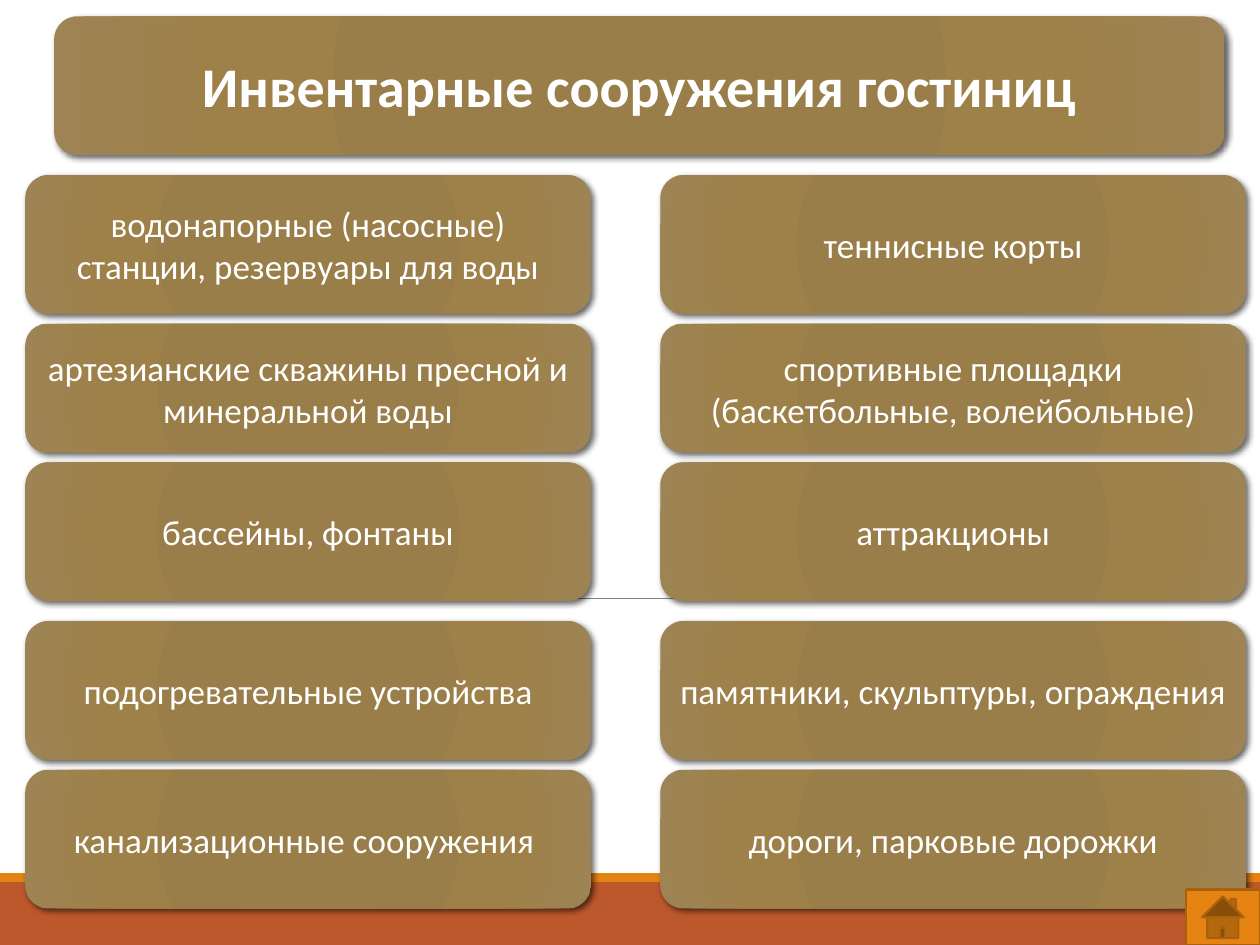
from dataclasses import dataclass

from lxml import etree
from pptx import Presentation
from pptx.dml.color import RGBColor
from pptx.enum.shapes import MSO_CONNECTOR, MSO_SHAPE
from pptx.enum.text import MSO_ANCHOR, PP_ALIGN
from pptx.oxml import parse_xml
from pptx.oxml.ns import nsdecls, qn
from pptx.shapes.autoshape import Shape
from pptx.slide import Slide
from pptx.util import Inches, Pt

RECTANGLE = MSO_SHAPE.RECTANGLE
ROUNDED = MSO_SHAPE.ROUNDED_RECTANGLE
HOME_BUTTON = MSO_SHAPE.ACTION_BUTTON_HOME
STRAIGHT = MSO_CONNECTOR.STRAIGHT
MIDDLE = MSO_ANCHOR.MIDDLE
CENTER = PP_ALIGN.CENTER


@dataclass(frozen=True)
class Theme:
    font: str = "Calibri"
    title_size: int = 32
    card_size: int = 20
    text: str = "FFFFFF"
    footer: str = "BD582C"
    accent: str = "E48312"
    button_line: str = "A9610D"
    divider: str = "808080"
    shadow: str = "000000"
    gradient: tuple = ((0, "9A7D48"), (34, "9A7E4A"), (70, "9E8049"), (100, "9E8454"))


@dataclass(frozen=True)
class Box:
    left: float
    top: float
    width: float
    height: float


@dataclass(frozen=True)
class Row:
    top: float
    height: float
    labels: tuple[str, str]


THEME = Theme()
TITLE_BOX = Box(0.43, 0.13, 9.29, 1.1)
COLUMNS = ((0.2, 4.49), (5.24, 4.65))
ROWS = (
    Row(1.39, 1.1, ("водонапорные (насосные) станции, резервуары для воды", "теннисные корты")),
    Row(2.57, 1.02, ("артезианские скважины пресной и минеральной воды",
                     "спортивные площадки (баскетбольные, волейбольные)")),
    Row(3.67, 1.1, ("бассейны, фонтаны", "аттракционы")),
    Row(4.93, 1.1, ("подогревательные устройства", "памятники, скульптуры, ограждения ")),
    Row(6.11, 1.1, ("канализационные сооружения ", "дороги, парковые дорожки")),
)


def add_box(slide: Slide, kind: int, box: Box) -> Shape:
    shape = slide.shapes.add_shape(
        kind, Inches(box.left), Inches(box.top), Inches(box.width), Inches(box.height))
    shape.shadow.inherit = False
    shape.line.fill.background()
    return shape


def add_solid(slide: Slide, kind: int, box: Box, color: str) -> Shape:
    shape = add_box(slide, kind, box)
    shape.fill.solid()
    shape.fill.fore_color.rgb = RGBColor.from_string(color)
    return shape


def apply_radial_gradient(shape: Shape) -> None:
    stops = "".join(
        f'<a:gs pos="{position * 1000}"><a:srgbClr val="{color}"/></a:gs>'
        for position, color in THEME.gradient)
    gradient = parse_xml(
        f'<a:gradFill {nsdecls("a")} rotWithShape="1"><a:gsLst>{stops}</a:gsLst>'
        '<a:path path="circle">'
        '<a:fillToRect l="100000" t="100000" r="100000" b="100000"/>'
        '</a:path></a:gradFill>')
    shape.fill.background()
    properties = shape.element.spPr
    properties.replace(properties.find(qn("a:noFill")), gradient)


def apply_shadow(shape: Shape) -> None:
    effects = shape.element.spPr.find(qn("a:effectLst"))
    effects.append(parse_xml(
        f'<a:outerShdw {nsdecls("a")} blurRad="{Pt(3.5)}" dist="{Pt(2)}" '
        f'dir="{45 * 60000}" algn="tl" rotWithShape="0">'
        f'<a:srgbClr val="{THEME.shadow}"><a:alpha val="60000"/></a:srgbClr>'
        '</a:outerShdw>'))


def add_card(slide: Slide, box: Box, text: str, size: int, bold: bool = False) -> None:
    shape = add_box(slide, ROUNDED, box)
    apply_radial_gradient(shape)
    apply_shadow(shape)
    frame = shape.text_frame
    frame.word_wrap = True
    frame.vertical_anchor = MIDDLE
    paragraph = frame.paragraphs[0]
    paragraph.alignment = CENTER
    run = paragraph.add_run()
    run.text = text
    text_format = {"name": THEME.font, "size": Pt(size), "bold": bold}
    for attribute, value in text_format.items():
        setattr(run.font, attribute, value)
    run.font.color.rgb = RGBColor.from_string(THEME.text)


def add_divider(slide: Slide, left: float, right: float, top: float) -> None:
    connector = slide.shapes.add_connector(
        STRAIGHT, Inches(left), Inches(top), Inches(right), Inches(top))
    connector.line.color.rgb = RGBColor.from_string(THEME.divider)
    connector.line.width = Pt(0.5)
    etree.SubElement(connector.element.spPr, qn("a:effectLst"))


def main() -> None:
    presentation = Presentation()
    presentation.slide_width = Inches(10)
    presentation.slide_height = Inches(7.5)
    slide = presentation.slides.add_slide(presentation.slide_layouts[6])

    add_solid(slide, RECTANGLE, Box(0, 7, 10, 0.5), THEME.footer)
    add_solid(slide, RECTANGLE, Box(0, 6.93, 10, 0.07), THEME.accent)
    add_divider(slide, 0.99, 9.09, 4.75)

    add_card(slide, TITLE_BOX, "Инвентарные сооружения гостиниц", THEME.title_size, bold=True)
    for column, (left, width) in enumerate(COLUMNS):
        for row in ROWS:
            card_box = Box(left, row.top, width, row.height)
            add_card(slide, card_box, row.labels[column], THEME.card_size)

    button = add_solid(slide, HOME_BUTTON, Box(9.41, 7.06, 0.59, 0.44), THEME.accent)
    button.line.color.rgb = RGBColor.from_string(THEME.button_line)
    button.line.width = Pt(1.25)

    presentation.save("out.pptx")


if __name__ == "__main__":
    main()
